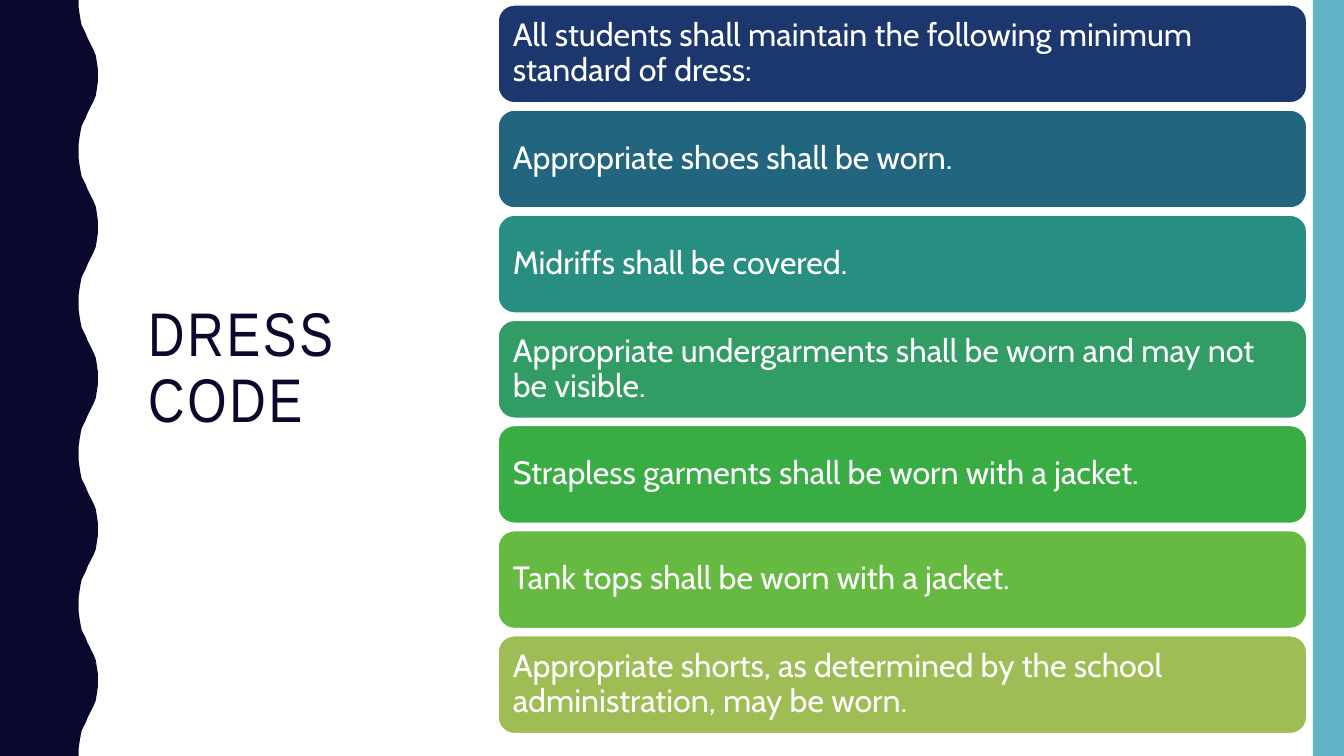
from pptx import Presentation
from pptx.dml.color import RGBColor
from pptx.enum.shapes import MSO_SHAPE
from pptx.enum.text import MSO_ANCHOR, PP_ALIGN
from pptx.util import Inches, Pt

RECTANGLE = MSO_SHAPE.RECTANGLE
ROUNDED = MSO_SHAPE.ROUNDED_RECTANGLE
MIDDLE = MSO_ANCHOR.MIDDLE
LEFT = PP_ALIGN.LEFT

NAVY = RGBColor(0x0B, 0x08, 0x2E)
SKY = RGBColor(0x62, 0xB4, 0xC6)
WHITE = RGBColor(0xFF, 0xFF, 0xFF)

RULES = [
    ("All students shall maintain the following minimum standard of dress:", RGBColor(0x1B, 0x37, 0x6E)),
    ("Appropriate shoes shall be worn.", RGBColor(0x22, 0x65, 0x7E)),
    ("Midriffs shall be covered.", RGBColor(0x29, 0x8E, 0x82)),
    ("Appropriate undergarments shall be worn and may not be visible.", RGBColor(0x31, 0x9D, 0x65)),
    ("Strapless garments shall be worn with a jacket.", RGBColor(0x39, 0xAC, 0x44)),
    ("Tank tops shall be worn with a jacket.", RGBColor(0x66, 0xBA, 0x42)),
    ("Appropriate shorts, as determined by the school administration, may be worn.", RGBColor(0x9E, 0xBE, 0x55)),
]
RULE_TOP, RULE_HEIGHT, RULE_PITCH = 0.05, 0.97, 1.043

# One swell of the wavy edge, from trough to crest; the way back mirrors it.
WAVE_PERIOD, WAVE_COUNT = 1.5, 5
SWELL = [
    (0.78, 0), (0.78, 0.07), (0.79, 0.14), (0.8, 0.2), (0.81, 0.25),
    (0.83, 0.29), (0.85, 0.33), (0.87, 0.38), (0.89, 0.42), (0.91, 0.46),
    (0.93, 0.5), (0.95, 0.55), (0.96, 0.61), (0.97, 0.68), (0.97, 0.75),
]


def write(shape, text, size, font_name, color):
    """Fill a shape with one left-aligned, vertically centred paragraph."""
    frame = shape.text_frame
    for name, value in {"word_wrap": True, "vertical_anchor": MIDDLE,
                        "margin_left": Inches(0.1), "margin_right": Inches(0.1)}.items():
        setattr(frame, name, value)
    paragraph = frame.paragraphs[0]
    paragraph.alignment = LEFT
    paragraph.line_spacing = 0.9
    run = paragraph.add_run()
    run.text = text
    run.font.size = Pt(size)
    run.font.name = font_name
    run.font.color.rgb = color
    return run


def paint(shape, color):
    shape.shadow.inherit = False
    shape.fill.solid()
    shape.fill.fore_color.rgb = color
    shape.line.fill.background()


prs = Presentation()
prs.slide_width = Inches(13.33)
prs.slide_height = Inches(7.5)
slide = prs.slides.add_slide(prs.slide_layouts[6])
shapes = slide.shapes

wave = SWELL + [(x, WAVE_PERIOD - y) for x, y in reversed(SWELL[:-1])]
edge = [(Inches(x), Inches(y + number * WAVE_PERIOD))
        for number in range(WAVE_COUNT) for x, y in wave]
builder = shapes.build_freeform(0, 0)
builder.add_line_segments(edge + [(0, Inches(7.5))], close=True)
paint(builder.convert_to_shape(), NAVY)

side_band = shapes.add_shape(RECTANGLE, Inches(13.02), 0, Inches(0.31), Inches(7.5))
paint(side_band, SKY)

title = shapes.add_textbox(Inches(1.37), Inches(0.71), Inches(3.7), Inches(5.91))
title_run = write(title, "DRESS CODE", 44, "Arial Narrow", NAVY)
title_run.font._element.set("spc", "200")

for index, (rule, color) in enumerate(RULES):
    bar = shapes.add_shape(ROUNDED, Inches(4.94), Inches(RULE_TOP + index * RULE_PITCH),
                           Inches(8.02), Inches(RULE_HEIGHT))
    paint(bar, color)
    bar.line.color.rgb = WHITE
    bar.line.width = Pt(1)
    write(bar, rule, 23, "Cabin", WHITE)

prs.save("out.pptx")
